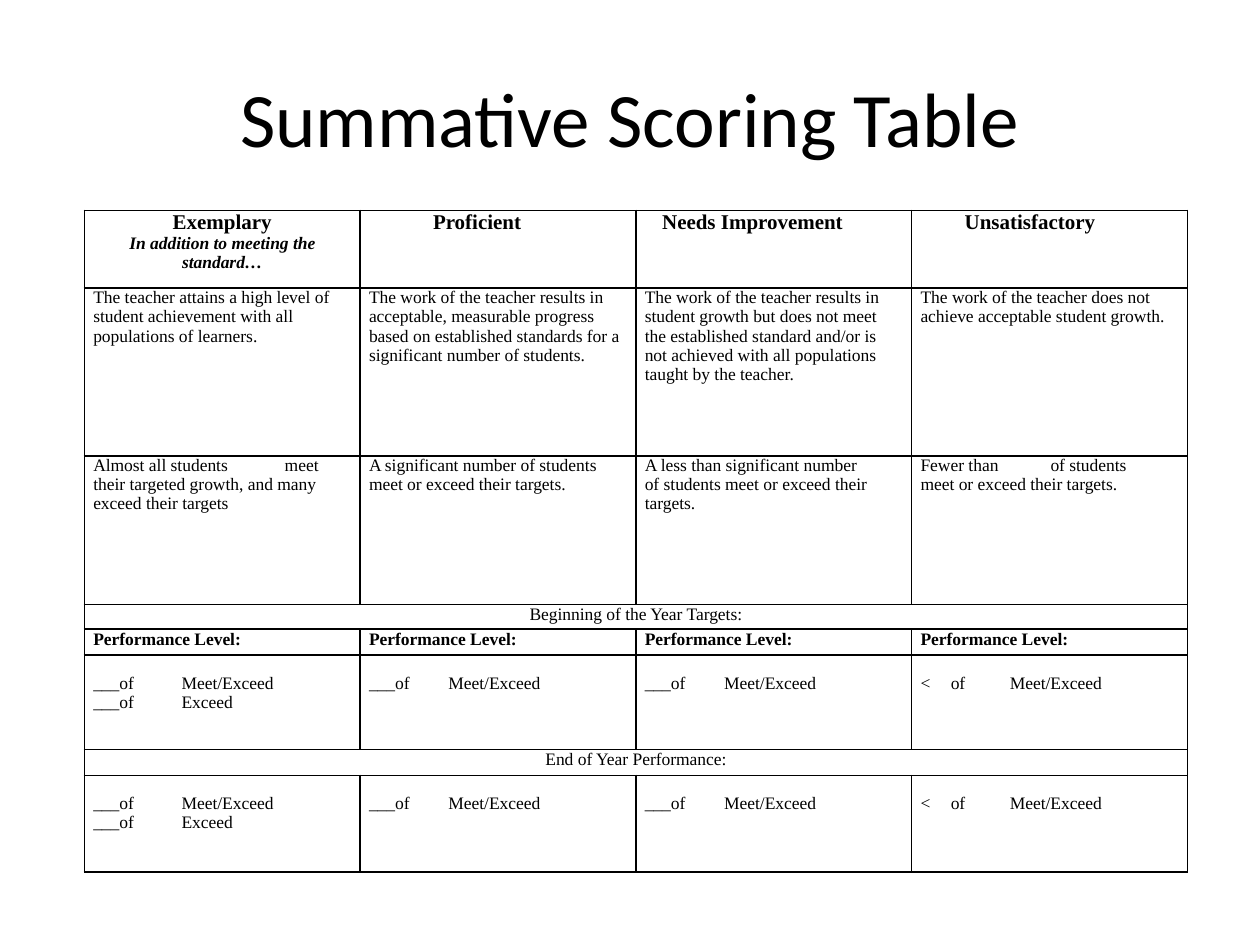
from dataclasses import dataclass

from lxml.etree import SubElement
from pptx import Presentation
from pptx.dml.color import RGBColor
from pptx.enum.text import MSO_ANCHOR, PP_ALIGN
from pptx.oxml.ns import qn
from pptx.util import Cm, Pt

SERIF = "Times New Roman"
BLACK = "000000"
COL_WIDTH = 5.56
ROW_HEIGHTS = (1.57, 3.38, 3.0, 0.49, 0.52, 1.91, 0.52, 1.95)
RIGHT_MARGINS = (0.38, 0.13, 0.38, 0.25)


@dataclass
class Para:
    text: str
    size: float = 10
    bold: bool = False
    italic: bool = False
    center: bool = False
    spacing: float = 11
    tabs: tuple = ()


@dataclass
class Entry:
    paras: list
    left: float = 0.18
    right: float = 0
    top: float = 0


def set_color(font, color: str) -> None:
    font.color.rgb = RGBColor.from_string(color)


def write_para(p, para: Para, face: str = SERIF) -> None:
    p.text = para.text
    p.alignment = PP_ALIGN.CENTER if para.center else PP_ALIGN.LEFT
    p.line_spacing = Pt(para.spacing) if para.spacing else 1.0
    if para.tabs:
        tab_list = SubElement(p._p.get_or_add_pPr(), qn("a:tabLst"))
        for pos in para.tabs:
            SubElement(tab_list, qn("a:tab"), pos=str(int(Cm(pos))), algn="l")
    font = p.font
    font.name, font.size = face, Pt(para.size)
    font.bold, font.italic = para.bold, para.italic
    set_color(font, BLACK)


def draw_borders(cell, color: str = BLACK) -> None:
    tc_pr = cell._tc.get_or_add_tcPr()
    for side in ("lnL", "lnR", "lnT", "lnB"):
        ln = SubElement(tc_pr, qn(f"a:{side}"), w=str(int(Pt(1))))
        fill = SubElement(ln, qn("a:solidFill"))
        SubElement(fill, qn("a:srgbClr"), val=color)


def fill_cell(cell, entry: Entry) -> None:
    cell.margin_left, cell.margin_right = Cm(entry.left), Cm(entry.right)
    cell.margin_top, cell.margin_bottom = Cm(entry.top), 0
    tf = cell.text_frame
    for i, para in enumerate(entry.paras):
        write_para(tf.add_paragraph() if i else tf.paragraphs[0], para)


def heading(text: str, left: float) -> Entry:
    return Entry([Para(text, 12, bold=True, spacing=13.6)], left)


def body(*cells: tuple) -> list:
    return [Entry([Para(text, tabs=tabs)], right=right)
            for (text, *tabs), right in zip(cells, RIGHT_MARGINS)]


def banner(text: str) -> list:
    return [Entry([Para(text, center=True, spacing=11.2)], left=0)]


def build_rows() -> list:
    headings = [
        Entry([Para("Exemplary", 12, bold=True, center=True, spacing=13.6),
               Para("In addition to meeting the standard…", bold=True,
                    italic=True, center=True)], 0.48, 0.48),
        heading("Proficient", 1.47),
        heading("Needs Improvement", 0.53),
        heading("Unsatisfactory", 1.07),
    ]
    standards = body(
        ("The teacher attains a high level of student achievement with all "
         "populations of learners.",),
        ("The work of the teacher results in acceptable, measurable progress "
         "based on established standards for a significant number of students.",),
        ("The work of the teacher results in student growth but does not meet "
         "the established standard and/or is not achieved with all "
         "populations taught by the teacher.",),
        ("The work of the teacher does not achieve acceptable student growth.",),
    )
    targets = body(
        ("Almost all students\tmeet their targeted growth, and many\t"
         "exceed their targets", 1.65, 3.86),
        ("A significant number of students\tmeet or exceed their targets.", 2.21),
        ("A less than significant number\tof students meet or exceed their "
         "targets.", 2.03),
        ("Fewer than\tof students meet or exceed their targets.", 2.62),
    )
    targets[-1].right = 0.7
    levels = [Entry([Para("Performance Level:", bold=True, spacing=11.4)])] * 4
    meet = "___of\tMeet/Exceed"
    middle = Entry([Para(meet, tabs=(1.6,))], top=0.38)
    scores = [
        Entry([Para(text, tabs=(1.78,)) for text in (meet, "___of\tExceed")], top=0.38),
        middle,
        middle,
        Entry([Para("<\tof\tMeet/Exceed", tabs=(0.61, 1.8))], top=0.38),
    ]
    return [headings, standards, targets, banner("Beginning of the Year Targets:"),
            levels, scores, banner("End of Year Performance:"), scores]


def add_title(s, text: str) -> None:
    sp = s.shapes.add_textbox(Cm(1.27), Cm(0.76), Cm(22.86), Cm(3.18))
    tf = sp.text_frame
    tf.word_wrap = True
    tf.vertical_anchor = MSO_ANCHOR.MIDDLE
    write_para(tf.paragraphs[0], Para(text, 44, center=True, spacing=0), "Calibri")


def add_scoring_table(s, rows: list) -> None:
    table = s.shapes.add_table(len(rows), 4, Cm(1.7), Cm(4.24),
                               Cm(4 * COL_WIDTH), Cm(sum(ROW_HEIGHTS))).table
    table.first_row = table.horz_banding = False
    for column in table.columns:
        column.width = Cm(COL_WIDTH)
    for i, (entries, height) in enumerate(zip(rows, ROW_HEIGHTS)):
        table.rows[i].height = Cm(height)
        for cell in table.rows[i].cells:
            draw_borders(cell)
            cell.fill.background()
        if len(entries) == 1:
            table.cell(i, 0).merge(table.cell(i, 3))
        for j, entry in enumerate(entries):
            fill_cell(table.cell(i, j), entry)


def main() -> None:
    prs = Presentation()
    prs.slide_width, prs.slide_height = Cm(25.4), Cm(19.05)
    s = prs.slides.add_slide(prs.slide_layouts[6])
    add_title(s, "Summative Scoring Table")
    add_scoring_table(s, build_rows())
    prs.save("out.pptx")


if __name__ == "__main__":
    main()
